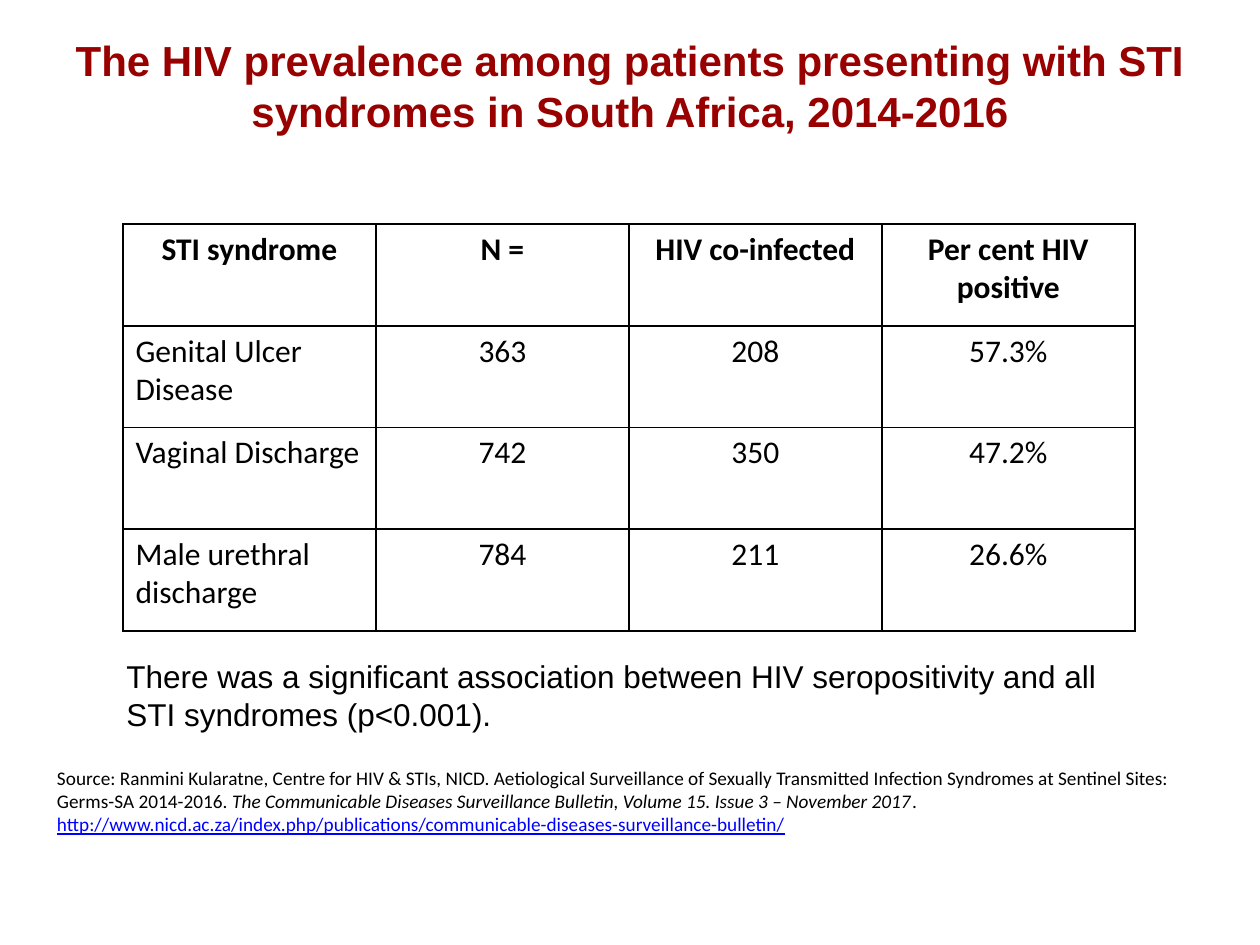
import pptx
import pptx.dml.color
import pptx.enum.text
import pptx.oxml
import pptx.oxml.ns
import pptx.util
from pptx.util import Cm, Pt

RGBColor = pptx.dml.color.RGBColor
ALIGN = pptx.enum.text.PP_ALIGN
ANCHOR = pptx.enum.text.MSO_ANCHOR

DARK_RED = RGBColor(0x99, 0x00, 0x00)
BLACK = RGBColor(0x00, 0x00, 0x00)
WHITE = RGBColor(0xFF, 0xFF, 0xFF)
LINK_BLUE = RGBColor(0x00, 0x00, 0xFF)

# Content
TITLE = ("The HIV prevalence among patients presenting with STI "
         "syndromes in South Africa, 2014-2016")
PREVALENCE = [
    ("STI syndrome", "N =", "HIV co-infected", "Per cent HIV positive"),
    ("Genital Ulcer Disease", "363", "208", "57.3%"),
    ("Vaginal Discharge", "742", "350", "47.2%"),
    ("Male urethral discharge", "784", "211", "26.6%"),
]
FINDING = ("There was a significant association between HIV seropositivity "
           "and all STI syndromes (p<0.001).")
SOURCE = [  # text, style
    ("Source: Ranmini Kularatne, Centre for HIV & STIs, NICD. Aetiological "
     "Surveillance of Sexually Transmitted Infection Syndromes at Sentinel "
     "Sites: Germs-SA 2014-2016. ", "plain"),
    ("The Communicable Diseases Surveillance Bulletin, Volume 15. "
     "Issue 3 – November 2017", "italic"),
    (". ", "plain"),
    ("http://www.nicd.ac.za/index.php/publications/"
     "communicable-diseases-surveillance-bulletin/", "link"),
]

# Layout in cm
TABLE_LEFT, TABLE_TOP = 2.48, 4.52
COLUMN_WIDTH, ROW_HEIGHT = 5.1, 2.05


def style_font(paragraph, name, size, color=BLACK, bold=False):
    font = paragraph.font
    font.name, font.size, font.bold = name, Pt(size), bold
    font.color.rgb = color


def add_text(slide, box, runs, name, size, **style):
    shape = slide.shapes.add_textbox(*(Cm(length) for length in box))
    shape.text_frame.word_wrap = True
    paragraph = shape.text_frame.paragraphs[0]
    style_font(paragraph, name, size, **style)
    for text, kind in runs:
        run = paragraph.add_run()
        run.text = text
        if kind == "italic":
            run.font.italic = True
        elif kind == "link":
            run.font.underline = True
            run.font.color.rgb = LINK_BLUE
    return shape.text_frame


def add_borders(cell):
    properties = cell._tc.get_or_add_tcPr()
    for side in ("lnL", "lnR", "lnT", "lnB"):
        properties.append(pptx.oxml.parse_xml(
            f'<a:{side} {pptx.oxml.ns.nsdecls("a")} w="{Pt(1)}"><a:solidFill>'
            f'<a:srgbClr val="{BLACK}"/></a:solidFill></a:{side}>'))


def add_prevalence_table(slide):
    rows, columns = len(PREVALENCE), len(PREVALENCE[0])
    table = slide.shapes.add_table(
        rows, columns, Cm(TABLE_LEFT), Cm(TABLE_TOP),
        Cm(columns * COLUMN_WIDTH), Cm(rows * ROW_HEIGHT)).table
    table.horz_banding = False
    for row, values in enumerate(PREVALENCE):
        for column, value in enumerate(values):
            cell = table.cell(row, column)
            cell.text = value
            add_borders(cell)
            cell.fill.solid()
            cell.fill.fore_color.rgb = WHITE
            paragraph = cell.text_frame.paragraphs[0]
            style_font(paragraph, "Calibri", 18, bold=row == 0)
            is_label = row > 0 and column == 0
            paragraph.alignment = ALIGN.LEFT if is_label else ALIGN.CENTER


def main():
    presentation = pptx.Presentation()
    presentation.slide_width, presentation.slide_height = Cm(25.4), Cm(19.05)
    slide = presentation.slides.add_slide(presentation.slide_layouts[6])

    # Title
    title = add_text(slide, (0.7, 0, 24, 3.43), [(TITLE, "plain")],
                     "Arial", 24, color=DARK_RED, bold=True)
    title.vertical_anchor = ANCHOR.MIDDLE
    title.paragraphs[0].alignment = ALIGN.CENTER

    # Table, finding and source
    add_prevalence_table(slide)
    add_text(slide, (2.3, 13.13, 21, 1.8), [(FINDING, "plain")], "Arial", 18)
    add_text(slide, (0.9, 15.32, 23.2, 1.68), SOURCE, "Calibri", 11)

    presentation.save("out.pptx")


if __name__ == "__main__":
    main()
